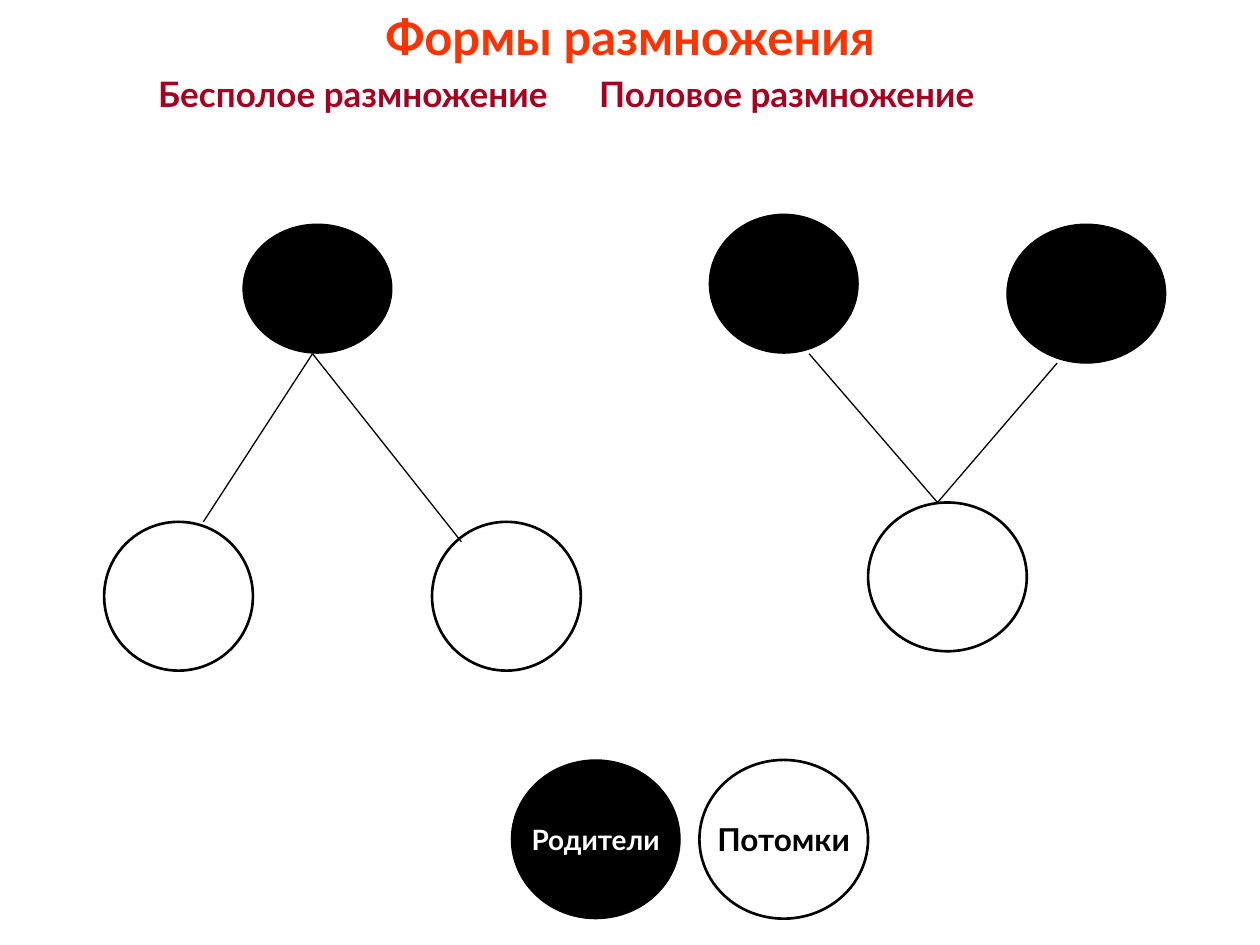
from dataclasses import dataclass

from lxml.etree import SubElement
from pptx import Presentation
from pptx.dml.color import RGBColor
from pptx.enum.shapes import MSO_CONNECTOR, MSO_SHAPE
from pptx.enum.text import MSO_ANCHOR, PP_ALIGN
from pptx.oxml.ns import qn
from pptx.slide import Slide
from pptx.util import Cm, Pt


@dataclass(frozen=True)
class Theme:
    font: str = "Lato"
    title: RGBColor = RGBColor(0xFF, 0x33, 0x00)
    heading: RGBColor = RGBColor(0xA5, 0x00, 0x21)
    black: RGBColor = RGBColor(0, 0, 0)
    white: RGBColor = RGBColor(0xFF, 0xFF, 0xFF)
    title_size: int = 28
    heading_size: int = 20
    thin_line: float = 0.75
    thick_line: float = 1.5


@dataclass(frozen=True)
class Organism:
    """A parent (black) or offspring (white) ellipse, in centimetres."""
    left: float
    top: float
    width: float
    height: float
    is_parent: bool
    label: str = ""
    label_size: int = 18


@dataclass(frozen=True)
class Descent:
    """A line from a parent to its offspring, in centimetres."""
    start: tuple[float, float]
    end: tuple[float, float]


THEME = Theme()
INSET = 0.25
HEADING_LEFTS = (3.19, 14.11)

ASEXUAL_FORK = (6.3, 7.13)
SEXUAL_JOIN = (18.9, 10.13)

ORGANISMS = (
    Organism(2.1, 10.52, 3, 3, False),
    Organism(8.71, 10.52, 3, 3, False),
    Organism(4.9, 4.52, 3, 2.6, True),
    Organism(14.3, 4.32, 3, 2.8, True),
    Organism(20.3, 4.52, 3.2, 2.8, True),
    Organism(17.5, 10.13, 3.2, 3, False),
)
DESCENTS = (
    Descent(ASEXUAL_FORK, (4.1, 10.52)),
    Descent(ASEXUAL_FORK, (9.3, 10.92)),
    Descent((16.31, 7.13), SEXUAL_JOIN),
    Descent((21.31, 7.32), SEXUAL_JOIN),
)
LEGEND = (
    Organism(10.31, 15.32, 3.4, 3.2, True, "Родители", 16),
    Organism(14.1, 15.32, 3.4, 3.2, False, "Потомки", 18),
)


def style_runs(paragraph, size: int, color: RGBColor) -> None:
    for run in paragraph.runs:
        run.font.name = THEME.font
        run.font.size = Pt(size)
        run.font.bold = True
        run.font.color.rgb = color


def add_headings(slide: Slide) -> None:
    """Add the title and, below it, one heading per column."""
    frame = slide.shapes.add_textbox(0, 0, Cm(25.4), Cm(2.6)).text_frame
    frame.word_wrap = True
    frame.margin_left = frame.margin_right = Cm(INSET)

    title = frame.paragraphs[0]
    title.text = "Формы размножения"
    title.alignment = PP_ALIGN.CENTER
    style_runs(title, THEME.title_size, THEME.title)

    columns = frame.add_paragraph()
    columns.text = "Бесполое размножение\tПоловое размножение"
    columns.space_before = Pt(4)
    asexual_left, sexual_left = (Cm(left - INSET) for left in HEADING_LEFTS)
    properties = columns._p.get_or_add_pPr()
    properties.set("marL", str(asexual_left))
    properties.set("indent", "0")
    tabs = SubElement(properties, qn("a:tabLst"))
    SubElement(tabs, qn("a:tab"), pos=str(sexual_left), algn="l")
    style_runs(columns, THEME.heading_size, THEME.heading)


def add_organism(slide: Slide, organism: Organism) -> None:
    ellipse = slide.shapes.add_shape(
        MSO_SHAPE.OVAL, Cm(organism.left), Cm(organism.top),
        Cm(organism.width), Cm(organism.height))
    ellipse.shadow.inherit = False
    ellipse.fill.solid()
    ellipse.fill.fore_color.rgb = THEME.black if organism.is_parent else THEME.white
    ellipse.line.color.rgb = THEME.black
    ellipse.line.width = Pt(THEME.thin_line if organism.is_parent else THEME.thick_line)
    if organism.label:
        frame = ellipse.text_frame
        frame.text = organism.label
        frame.word_wrap = False
        frame.vertical_anchor = MSO_ANCHOR.MIDDLE
        label = frame.paragraphs[0]
        label.alignment = PP_ALIGN.CENTER
        style_runs(label, organism.label_size,
                   THEME.white if organism.is_parent else THEME.black)


def add_descent(slide: Slide, descent: Descent) -> None:
    ends = (Cm(value) for value in descent.start + descent.end)
    connector = slide.shapes.add_connector(MSO_CONNECTOR.STRAIGHT, *ends)
    connector.line.color.rgb = THEME.black
    connector.line.width = Pt(THEME.thin_line)
    SubElement(connector._element.spPr, qn("a:effectLst"))


def main() -> None:
    presentation = Presentation()
    presentation.slide_width = Cm(25.4)
    presentation.slide_height = Cm(19.05)
    slide = presentation.slides.add_slide(presentation.slide_layouts[6])

    add_headings(slide)
    for organism in ORGANISMS:
        add_organism(slide, organism)
    for descent in DESCENTS:
        add_descent(slide, descent)
    for sample in LEGEND:
        add_organism(slide, sample)

    presentation.save("out.pptx")


if __name__ == "__main__":
    main()
